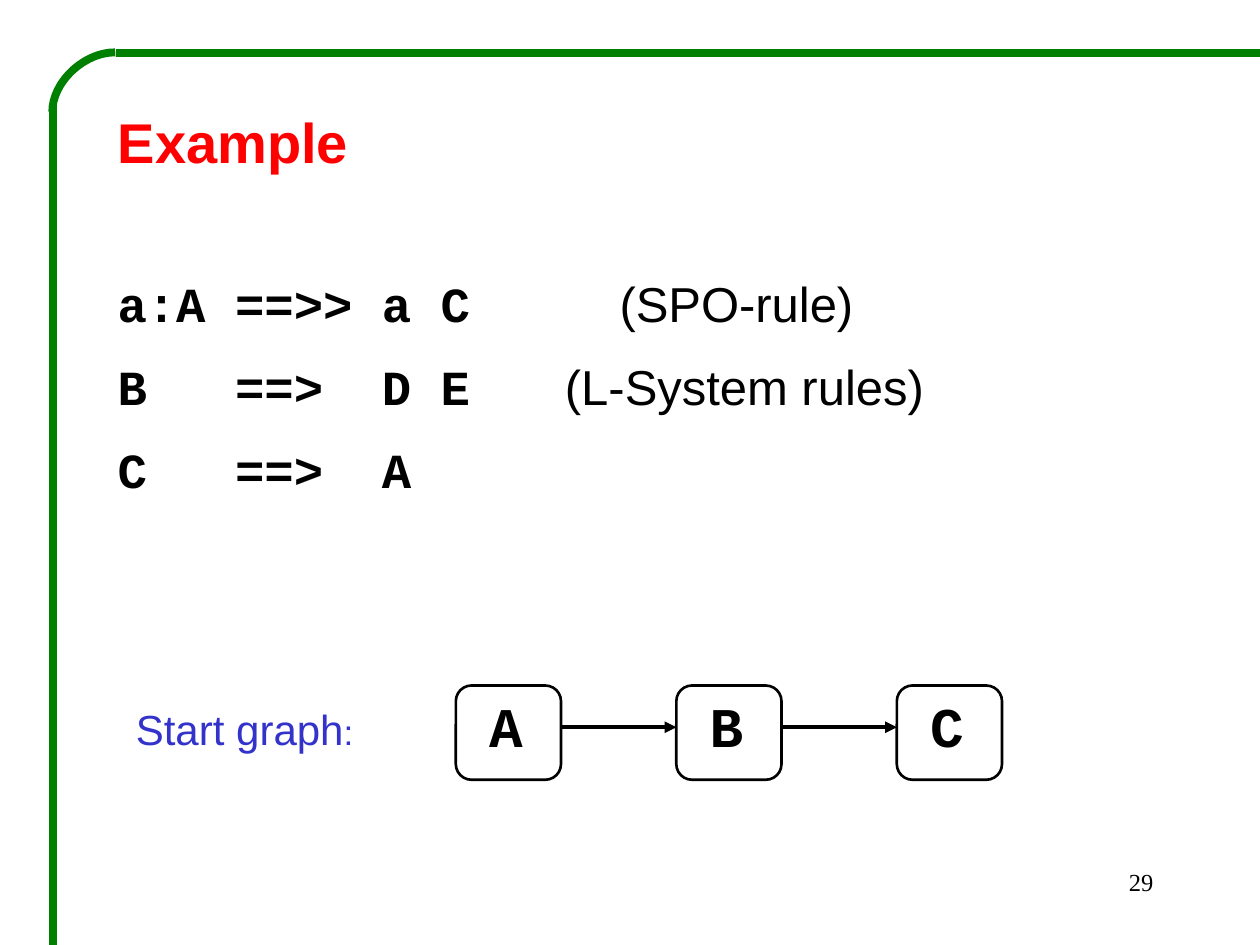
from lxml.etree import SubElement
from pptx import Presentation
from pptx.dml.color import RGBColor
from pptx.enum.shapes import MSO_CONNECTOR as CONN, MSO_SHAPE as SHAPE
from pptx.enum.text import MSO_ANCHOR as ANCHOR, PP_ALIGN as ALIGN
from pptx.oxml.ns import qn
from pptx.util import Cm, Pt

BLACK, GREEN, RED, BLUE = "000000", "008000", "FF0000", "3333CC"
SANS, MONO, SERIF = "Arial", "Courier New", "Times New Roman"
RULES = [
    ("a:A\t==>>\ta C", "(SPO-rule)", 10.12),
    ("B\t==>\tD E", "(L-System rules)", 9.02),
    ("C\t==>\tA", "", None),
]


def rgb(color):
    """Turn a hex string into a colour."""
    return RGBColor.from_string(color)


def add_run(p, text, size, font, color=BLACK, bold=False):
    """Append a formatted run to a paragraph."""
    r = p.add_run()
    r.text = text
    r.font.size, r.font.name, r.font.bold = Pt(size), font, bold
    r.font.color.rgb = rgb(color)


def add_box(s, x, y, w, h):
    """Add a wrapping text box and return its text frame."""
    tf = s.shapes.add_textbox(Cm(x), Cm(y), Cm(w), Cm(h)).text_frame
    tf.word_wrap = True
    return tf


def add_line(s, x1, y1, x2, y2, color, width, kind=CONN.STRAIGHT):
    """Add a connector without a shadow."""
    line = s.shapes.add_connector(kind, Cm(x1), Cm(y1), Cm(x2), Cm(y2))
    line.line.color.rgb = rgb(color)
    line.line.width = Pt(width)
    SubElement(line._element.spPr, qn("a:effectLst"))
    return line


def set_tabs(p, stops):
    """Give a paragraph left tab stops, in centimetres."""
    tabs = SubElement(p._p.get_or_add_pPr(), qn("a:tabLst"))
    for stop in stops:
        SubElement(tabs, qn("a:tab"), pos=str(Cm(stop)), algn="l")


def add_frame(s, x, y, right, bottom):
    """Draw the green border with its rounded corner."""
    add_line(s, right, y, x + 1.27, y, GREEN, 4.5)
    add_line(s, x, y + 1.05, x, bottom, GREEN, 4.5)
    corner = add_line(s, x + 0.03, y - 0.04, x + 1.23, y + 1.23, GREEN, 4.5, CONN.CURVE)
    corner._element.spPr.find(qn("a:prstGeom")).set("prst", "curvedConnector2")
    corner._element.spPr.find(qn("a:xfrm")).set("rot", str(270 * 60000))


def add_title(s, x, y, w, h):
    """Place and format the title."""
    title = s.shapes.title
    title.left, title.top, title.width, title.height = Cm(x), Cm(y), Cm(w), Cm(h)
    tf = title.text_frame
    tf.vertical_anchor = ANCHOR.TOP
    p = tf.paragraphs[0]
    p.alignment = ALIGN.LEFT
    add_run(p, "Example", 32, SANS, RED, True)


def add_rules(s, x, y, w, h):
    """List the rewriting rules in columns."""
    tf = add_box(s, x, y, w, h)
    for i, (rule, note, note_x) in enumerate(RULES):
        p = tf.paragraphs[0] if i == 0 else tf.add_paragraph()
        p.space_before = Pt(14 if i else 0)
        set_tabs(p, [2.37, 5.33] + ([note_x] if note else []))
        add_run(p, rule, 28, MONO, bold=True)
        if note:
            add_run(p, "\t" + note, 28, SANS)


def add_node(s, name, x, y, w, h):
    """Add one rounded graph node."""
    sp = s.shapes.add_shape(SHAPE.ROUNDED_RECTANGLE, Cm(x), Cm(y), Cm(w), Cm(h))
    sp.shadow.inherit = False
    sp.fill.background()
    sp.line.color.rgb, sp.line.width = rgb(BLACK), Pt(1.5)
    tf = sp.text_frame
    tf.vertical_anchor, tf.word_wrap = ANCHOR.TOP, True
    tf.margin_left, tf.margin_top, tf.margin_right = Cm(0.58), Cm(0.03), 0
    p = tf.paragraphs[0]
    p.alignment = ALIGN.LEFT
    add_run(p, name, 32, MONO, bold=True)


def add_graph(s, x, y, w, h):
    """Draw the labelled start graph as a chain of nodes."""
    p = add_box(s, x, y + 0.23, 5.87, 1.27).paragraphs[0]
    add_run(p, "Start graph", 24, SANS, BLUE)
    add_run(p, ":", 20, SANS, BLUE)
    node_w, pitch = 2.12, 4.445
    first = x + w - node_w - 2 * pitch
    for i, name in enumerate("ABC"):
        left = first + i * pitch
        add_node(s, name, left, y, node_w, h)
        if i:
            mid = y + 0.84
            arrow = add_line(s, left - pitch + node_w, mid, left, mid, BLACK, 2.25)
            SubElement(arrow.line._get_or_add_ln(), qn("a:tailEnd"), type="triangle")


def add_number(s, x, y, w, h):
    """Add the slide number."""
    p = add_box(s, x, y, w, h).paragraphs[0]
    p.alignment = ALIGN.RIGHT
    add_run(p, "29", 14, SERIF)


def main():
    """Build and save the slide."""
    prs = Presentation()
    prs.slide_width, prs.slide_height = Cm(25.4), Cm(19.05)
    s = prs.slides.add_slide(prs.slide_layouts[5])
    add_frame(s, 1.06, 1.06, 25.4, 19.05)
    add_title(s, 2.12, 2.05, 22, 1.6)
    add_rules(s, 2.12, 5.38, 22, 5.1)
    add_graph(s, 2.49, 13.82, 17.71, 1.9)
    add_number(s, 18.2, 17.35, 5.3, 1.27)
    prs.save("out.pptx")


if __name__ == "__main__":
    main()
